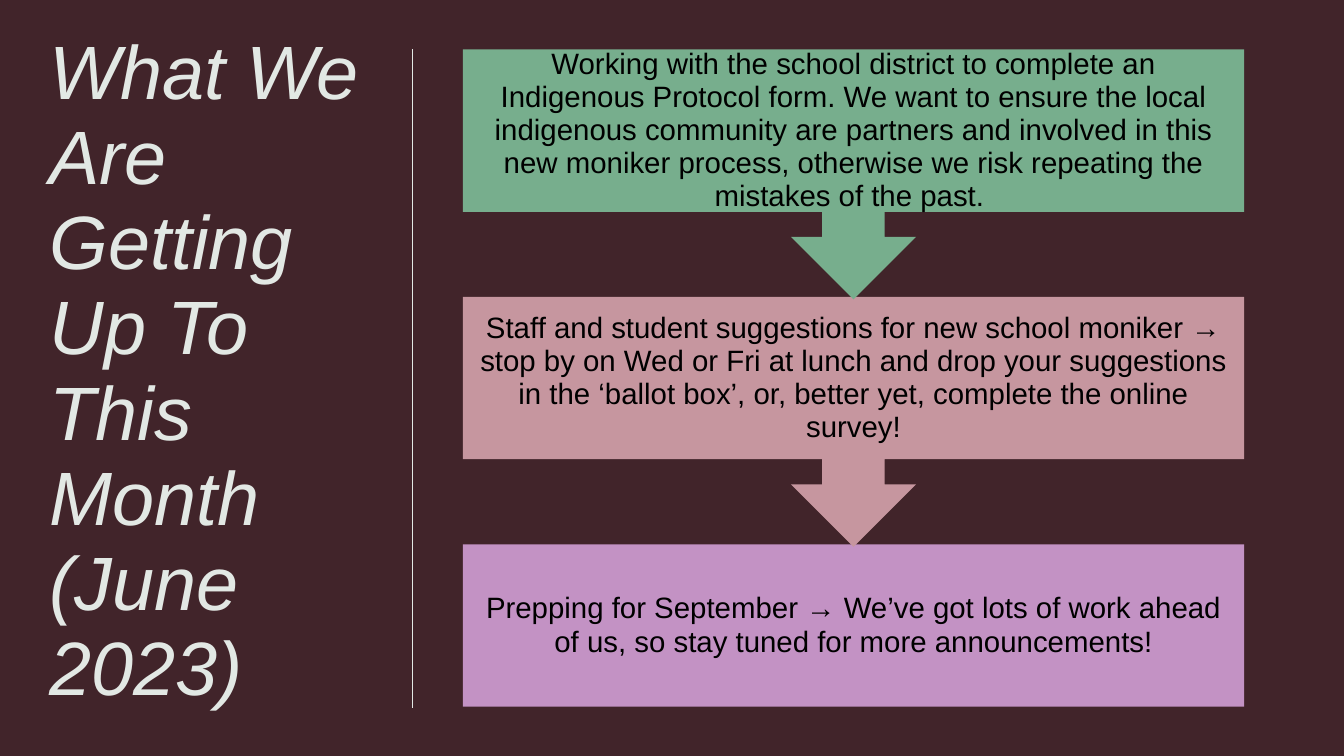
from dataclasses import dataclass

from lxml.etree import SubElement
from pptx import Presentation
from pptx.dml.color import RGBColor
from pptx.enum.shapes import MSO_CONNECTOR, MSO_SHAPE
from pptx.enum.text import MSO_ANCHOR, MSO_AUTO_SIZE, PP_ALIGN
from pptx.oxml.ns import qn
from pptx.util import Inches, Pt


@dataclass(frozen=True)
class Theme:
    font: str = "Arial"
    background: RGBColor = RGBColor.from_string("41242A")
    light: RGBColor = RGBColor.from_string("E2E8E4")
    dark: RGBColor = RGBColor.from_string("000000")
    green: RGBColor = RGBColor.from_string("77AE8D")
    pink: RGBColor = RGBColor.from_string("C6969F")
    purple: RGBColor = RGBColor.from_string("C392C4")
    title_size: Pt = Pt(54)
    body_size: Pt = Pt(21)
    line_spacing: float = 0.94


theme = Theme()


def prepare_frame(shape, inset):
    frame = shape.text_frame
    frame.word_wrap = True
    frame.auto_size = MSO_AUTO_SIZE.NONE
    frame.vertical_anchor = MSO_ANCHOR.MIDDLE
    frame.margin_left = frame.margin_right = Inches(inset)
    frame.margin_top = frame.margin_bottom = Inches(inset)
    return frame.paragraphs[0]


def add_run(paragraph, text, size, color, italic=False):
    run = paragraph.add_run()
    run.text = text
    run.font.name = theme.font
    run.font.size = size
    run.font.italic = italic
    run.font.color.rgb = color


presentation = Presentation()
presentation.slide_width = Inches(13.33)
presentation.slide_height = Inches(7.5)
slide = presentation.slides.add_slide(presentation.slide_layouts[5])
slide.background.fill.solid()
slide.background.fill.fore_color.rgb = theme.background

title = slide.shapes.title
title.left, title.top = Inches(0.49), Inches(0.43)
title.width, title.height = Inches(3.12), Inches(6.52)
paragraph = prepare_frame(title, 0)
paragraph.alignment = PP_ALIGN.LEFT
paragraph.line_spacing = theme.line_spacing
add_run(paragraph, "What We Are Getting Up To This Month", theme.title_size, theme.light, True)
paragraph.add_line_break()
add_run(paragraph, "(June 2023)", theme.title_size, theme.light, True)

divider = slide.shapes.add_connector(
    MSO_CONNECTOR.STRAIGHT, Inches(4.09), Inches(0.49), Inches(4.09), Inches(7.02)
)
divider.line.color.rgb = theme.light
divider.line.width = Pt(0.75)
SubElement(divider._element.spPr, qn("a:effectLst"))

steps = [
    (
        MSO_SHAPE.DOWN_ARROW_CALLOUT, 2.48, theme.green,
        "Working with the school district to complete an Indigenous Protocol form. "
        "We want to ensure the local indigenous community are partners and involved "
        "in this new moniker process, otherwise we risk repeating the mistakes of the past. ",
    ),
    (
        MSO_SHAPE.DOWN_ARROW_CALLOUT, 2.48, theme.pink,
        "Staff and student suggestions for new school moniker → stop by on Wed or Fri "
        "at lunch and drop your suggestions in the ‘ballot box’, or, better yet, "
        "complete the online survey!",
    ),
    (
        MSO_SHAPE.RECTANGLE, 1.61, theme.purple,
        "Prepping for September → We’ve got lots of work ahead of us, "
        "so stay tuned for more announcements!",
    ),
]
step_top, step_pitch = 0.49, 2.455

for index, (kind, height, color, text) in reversed(list(enumerate(steps))):
    step = slide.shapes.add_shape(
        kind, Inches(4.59), Inches(step_top + index * step_pitch), Inches(7.75), Inches(height)
    )
    step.shadow.inherit = False
    step.fill.solid()
    step.fill.fore_color.rgb = color
    step.line.fill.background()
    paragraph = prepare_frame(step, 0.16)
    paragraph.alignment = PP_ALIGN.CENTER
    paragraph.line_spacing = theme.line_spacing
    add_run(paragraph, text, theme.body_size, theme.dark)

presentation.save("out.pptx")
